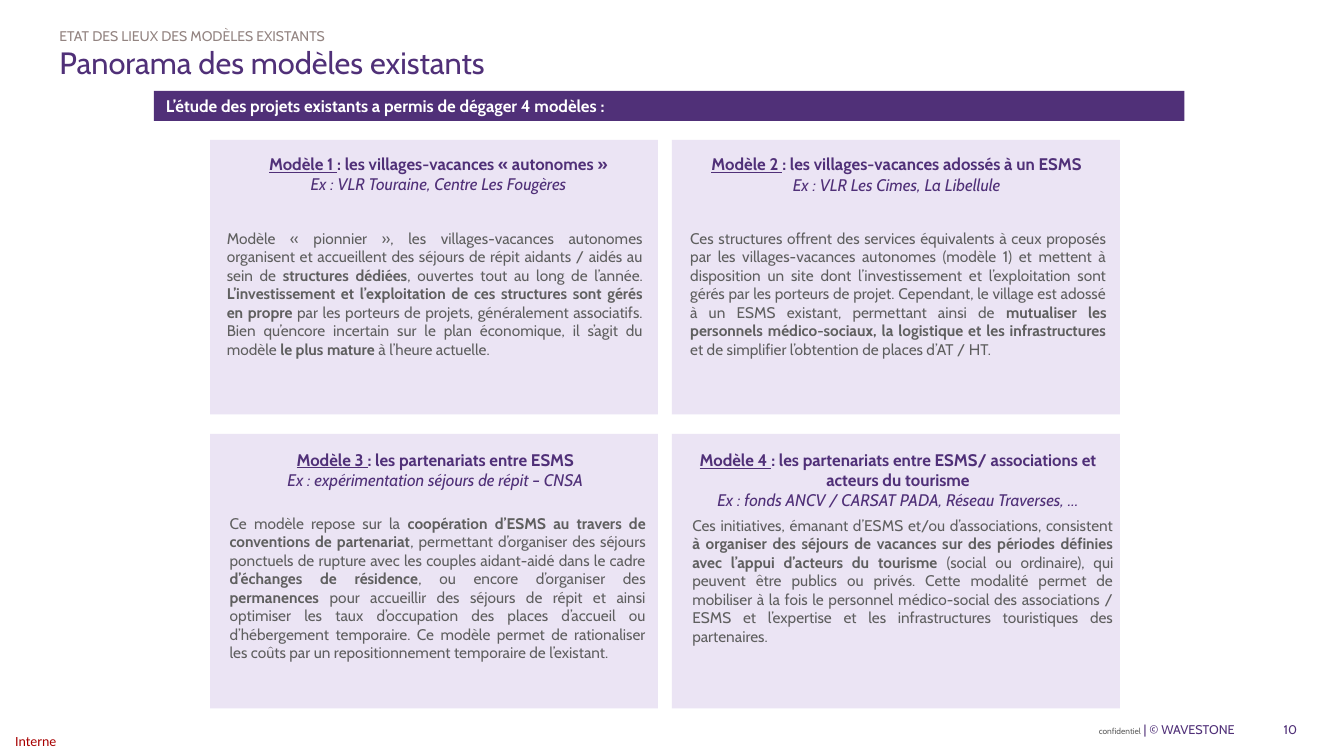
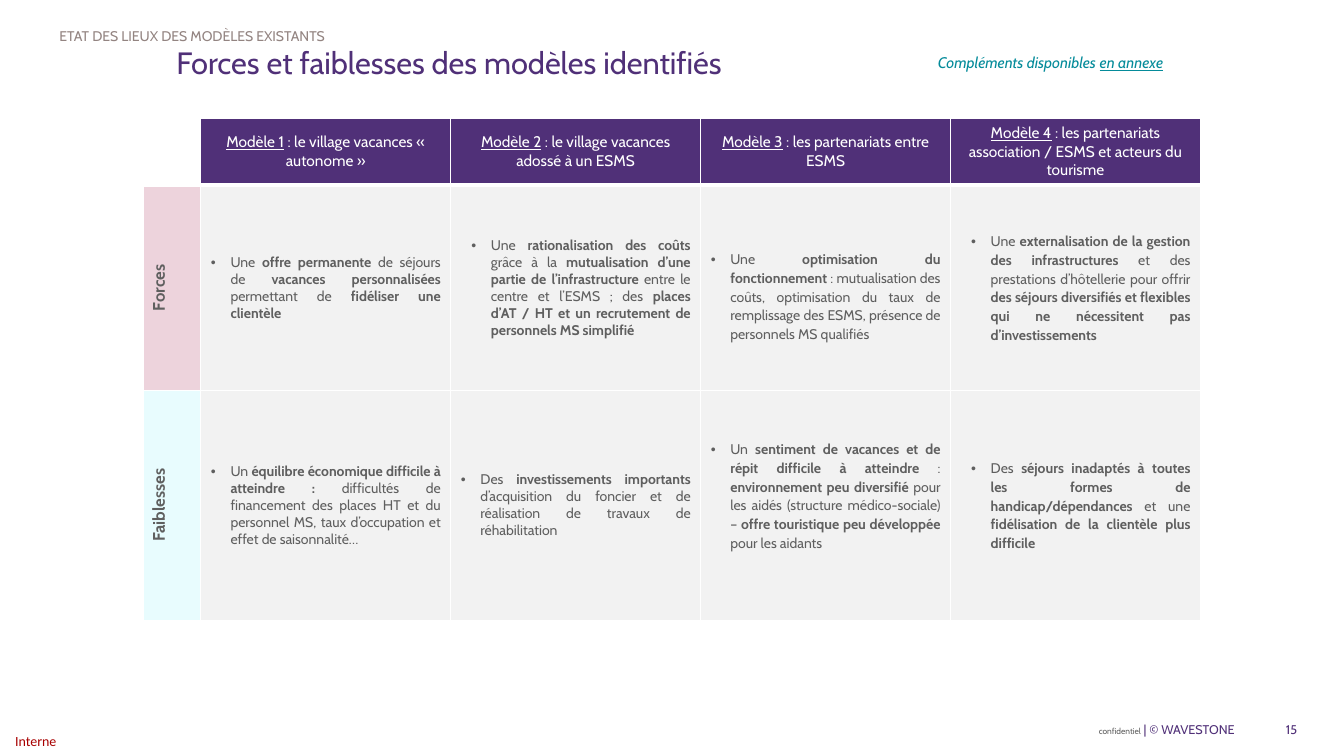
import pptx
import pptx.dml.color
import pptx.enum.shapes
import pptx.enum.text
import pptx.oxml
import pptx.oxml.ns
import pptx.util

Pt = pptx.util.Pt
ALIGN = pptx.enum.text.PP_ALIGN
ANCHOR = pptx.enum.text.MSO_ANCHOR
RECT = pptx.enum.shapes.MSO_SHAPE.RECTANGLE

COLORS = {
    "violet": "503078", "lilac": "EBE4F4", "text": "5F5F5F", "taupe": "938481",
    "red": "A80000", "teal": "048B9A", "white": "FFFFFF", "grey": "F2F2F2",
    "pink": "EDD3DC", "ice": "E8FCFE",
}
KICKER = "ETAT DES LIEUX DES MODÈLES EXISTANTS"


def rgb(name):
    return pptx.dml.color.RGBColor.from_string(COLORS[name])


def sub(parent, tag, **attrs):
    """Append a DrawingML element."""
    el = pptx.oxml.parse_xml(f"<{tag} {pptx.oxml.ns.nsdecls('a')}/>")
    for key, value in attrs.items():
        el.set(key, str(value))
    parent.append(el)
    return el


class Deck:
    FONT = "Cabin"
    INSET = (8.5, 3.6, 8.5, 3.6)

    def __init__(self):
        self.prs = pptx.Presentation()
        self.prs.slide_width, self.prs.slide_height = Pt(960), Pt(540)
        self.slide = None

    # Text
    def run(self, p, text, color="text", **fmt):
        r = p.add_run()
        r.text = text
        for key, value in {"name": self.FONT, **fmt}.items():
            setattr(r.font, key, value)
        r.font.color.rgb = rgb(color)

    def add_runs(self, p, text, size, color="text", align=ALIGN.LEFT, toggle="bold", **fmt):
        """Add runs; each * switches the toggled attribute on or off."""
        p.alignment = align
        for i, part in enumerate(text.split("*")):
            if part:
                self.run(p, part, color, size=Pt(size), **{**fmt, toggle: i % 2 == 1})

    def frame(self, sp, inset, anchor):
        tf = sp.text_frame
        values = {"word_wrap": True, "vertical_anchor": anchor,
                  "auto_size": pptx.enum.text.MSO_AUTO_SIZE.NONE}
        sides = ("margin_left", "margin_top", "margin_right", "margin_bottom")
        values.update(zip(sides, map(Pt, inset)))
        for key, value in values.items():
            setattr(tf, key, value)
        return tf

    def text(self, x, y, w, h, inset=INSET, anchor=ANCHOR.TOP):
        sp = self.slide.shapes.add_textbox(Pt(x), Pt(y), Pt(w), Pt(h))
        return self.frame(sp, inset, anchor)

    # Shared slide parts
    def placeholder(self, sp, box, anchor):
        for key, value in zip(("left", "top", "width", "height"), box):
            setattr(sp, key, Pt(value))
        return self.frame(sp, (8.5, 0, 8.5, 0), anchor).paragraphs[0]

    def new_slide(self, title, number, title_x=34, title_w=893):
        self.slide = self.prs.slides.add_slide(self.prs.slide_layouts[1])
        title_sp, kicker_sp = self.slide.placeholders
        p = self.placeholder(title_sp, (title_x, 31.5, title_w, 67.5), ANCHOR.TOP)
        self.add_runs(p, title, 22, "violet")
        p = self.placeholder(kicker_sp, (34, 11.5, 893, 20), ANCHOR.BOTTOM)
        pPr = p._p.get_or_add_pPr()
        pPr.set("marL", "0")
        pPr.set("indent", "0")
        sub(pPr, "a:buNone")
        p.space_before = Pt(0)
        self.add_runs(p, KICKER, 10, "taupe", ALIGN.JUSTIFY)
        self.footer(number)

    def footer(self, number):
        p = self.text(731.5, 512, 157.5, 18, (7.2, 3.6, 7.2, 3.6), ANCHOR.MIDDLE).paragraphs[0]
        for text, size, color in (("confidentiel", 6, "text"), (" ", 9, "text"),
                                  ("| © WAVESTONE", 9, "violet")):
            self.add_runs(p, text, size, color, ALIGN.RIGHT)
        p = self.text(892, 515.5, 34.5, 11, (0, 0, 0, 0), ANCHOR.MIDDLE).paragraphs[0]
        self.add_runs(p, str(number), 9, "violet", ALIGN.RIGHT)
        p = self.text(0, 519, 51, 21, (10.8, 0, 0, 0), ANCHOR.MIDDLE).paragraphs[0]
        self.add_runs(p, "Interne", 10, "red", name="Calibri")

    # Shapes
    def rect(self, x, y, w, h, fill):
        sp = self.slide.shapes.add_shape(RECT, Pt(x), Pt(y), Pt(w), Pt(h))
        sp.shadow.inherit = False
        sp.fill.solid()
        sp.fill.fore_color.rgb = rgb(fill)
        sp.line.fill.background()
        return sp

    def band(self, x, y, w, h, text):
        tf = self.frame(self.rect(x, y, w, h, "violet"), self.INSET, ANCHOR.MIDDLE)
        self.add_runs(tf.paragraphs[0], "*" + text, 12, "white")

    def model_head(self, box, head, example):
        tf = self.text(*box)
        self.add_runs(tf.paragraphs[0], head, 12, "violet", ALIGN.CENTER, "underline", bold=True)
        self.add_runs(tf.add_paragraph(), example, 12, "violet", ALIGN.CENTER, italic=True)

    # Table
    def table(self, x, y, cols, rows):
        sp = self.slide.shapes.add_table(len(rows), len(cols), Pt(x), Pt(y),
                                         Pt(sum(cols)), Pt(sum(rows)))
        tbl = sp.table
        tbl.first_row = tbl.horz_banding = False
        for lines, key, sizes in ((tbl.columns, "width", cols), (tbl.rows, "height", rows)):
            for line, size in zip(lines, sizes):
                setattr(line, key, Pt(size))
        return tbl

    def cell(self, cell, fill, bottom=1):
        tcPr = cell._tc.get_or_add_tcPr()
        for side, width in (("L", 1), ("R", 1), ("T", 1), ("B", bottom)):
            ln = sub(tcPr, f"a:ln{side}", w=Pt(width))
            sub(sub(ln, "a:solidFill"), "a:srgbClr", val=COLORS["white"])
        cell.fill.solid()
        cell.fill.fore_color.rgb = rgb(fill)
        cell.vertical_anchor = ANCHOR.MIDDLE
        return cell.text_frame.paragraphs[0]

    def row_label(self, cell, text, fill):
        p = self.cell(cell, fill)
        cell.vertical_anchor = ANCHOR.TOP
        cell._tc.tcPr.set("vert", "vert270")
        self.add_runs(p, "*" + text, 12, align=ALIGN.CENTER)

    def bullet_cell(self, cell, text, indent, spacing, **margins):
        p = self.cell(cell, "grey")
        pPr = p._p.get_or_add_pPr()
        pPr.set("marL", str(Pt(indent)))
        pPr.set("indent", str(-Pt(14)))
        sub(pPr, "a:buFont", typeface="Arial")
        sub(pPr, "a:buChar", char="•")
        p.line_spacing = spacing
        p.font.size = Pt(10)
        p.font.color.rgb = rgb("text")
        for key, value in margins.items():
            setattr(cell, key, Pt(value))
        self.add_runs(p, text, 10, align=ALIGN.JUSTIFY)


# Each model: heading box, heading, examples, body box, body
MODELS = [
    ((156, 106.5, 314.5, 36), "*Modèle 1 *: les villages-vacances « autonomes »",
     "Ex : VLR Touraine, Centre Les Fougères", (153.5, 160, 314.5, 114),
     "Modèle « pionnier », les villages-vacances autonomes organisent et accueillent des séjours "
     "de répit aidants / aidés au sein de *structures dédiées*, ouvertes tout au long de l’année. "
     "*L’investissement et l’exploitation de ces structures sont gérés en propre *par les porteurs "
     "de projets, généralement associatifs. Bien qu’encore incertain sur le plan économique, il "
     "s’agit du modèle *le plus mature *à l’heure actuelle."),
    ((471, 106.5, 339, 51), "*Modèle 2 *: les villages-vacances adossés à un ESMS",
     "Ex : VLR Les Cimes, La Libellule", (484.5, 160, 314.5, 114),
     "Ces structures offrent des services équivalents à ceux proposés par les villages-vacances "
     "autonomes (modèle 1) et mettent à disposition un site dont l’investissement et "
     "l’exploitation sont gérés par les porteurs de projet. Cependant, le village est adossé à un "
     "ESMS existant, permettant ainsi de *mutualiser les personnels médico-sociaux, la logistique "
     "et les infrastructures *et de simplifier l’obtention de places d’AT / HT."),
    ((151, 317.5, 320, 36), "*Modèle 3 *: les partenariats entre ESMS",
     "Ex : expérimentation séjours de répit – CNSA", (155.5, 363.5, 314.5, 127),
     "Ce modèle repose sur la *coopération d’ESMS au travers de conventions de partenariat*, "
     "permettant d’organiser des séjours ponctuels de rupture avec les couples aidant-aidé dans le "
     "cadre *d’échanges de résidence*, ou encore d’organiser des *permanences *pour accueillir des "
     "séjours de répit et ainsi optimiser les taux d’occupation des places d’accueil ou "
     "d’hébergement temporaire. Ce modèle permet de rationaliser les coûts par un "
     "repositionnement temporaire de l’existant."),
    ((481.5, 317.5, 320, 65),
     "*Modèle 4 *: les partenariats entre ESMS/ associations et acteurs du tourisme",
     "Ex : fonds ANCV / CARSAT PADA, Réseau Traverses, …", (486, 365, 318, 101),
     "Ces initiatives, émanant d’ESMS et/ou d’associations, consistent *à organiser des séjours de "
     "vacances sur des périodes définies avec l’appui d’acteurs du tourisme *(social ou "
     "ordinaire), qui peuvent être publics ou privés. Cette modalité permet de mobiliser à la fois "
     "le personnel médico-social des associations / ESMS et l’expertise et les infrastructures "
     "touristiques des partenaires."),
]

HEADERS = [
    "*Modèle 1* : le village vacances « autonome »",
    "*Modèle 2* : le village vacances adossé à un ESMS",
    "*Modèle 3* : les partenariats entre ESMS",
    "*Modèle 4* : les partenariats association / ESMS et acteurs du tourisme",
]
# Each row: label, fill, then cells of text, indent, line spacing, margins
ROWS = [
    ("Forces", "pink", [
        ("Une *offre permanente *de séjours de *vacances personnalisées* permettant de "
         "*fidéliser une clientèle*", 14, 1.0, {}),
        ("Une *rationalisation des coûts *grâce à la *mutualisation d’une partie de "
         "l’infrastructure *entre le centre et l’ESMS ; des *places d’AT / HT et un recrutement "
         "de personnels MS simplifié*", 21.5, 1.0, {}),
        ("Une *optimisation du fonctionnement *: mutualisation des coûts, optimisation du taux de "
         "remplissage des ESMS, présence de personnels MS qualifiés", 14, 1.1,
         {"margin_top": 16}),
        ("Une *externalisation de la gestion des infrastructures* et des prestations d’hôtellerie "
         "pour offrir *des séjours diversifiés et flexibles qui ne nécessitent pas "
         "d’investissements*", 21.5, 1.1, {}),
    ]),
    ("Faiblesses", "ice", [
        ("Un *équilibre économique difficile à atteindre : *difficultés de financement des places "
         "HT et du personnel MS, taux d’occupation et effet de saisonnalité…", 14, 1.0, {}),
        ("Des *investissements importants *d’acquisition du foncier et de réalisation de travaux "
         "de réhabilitation", 14, 1.0, {}),
        ("Un *sentiment de vacances et de répit difficile à atteindre *: *environnement peu "
         "diversifié *pour les aidés (structure médico-sociale) – *offre touristique peu "
         "développée* pour les aidants", 14, 1.1, {"margin_bottom": 17.5}),
        ("Des *séjours inadaptés à toutes les formes de handicap/dépendances *et une "
         "*fidélisation de la clientèle plus difficile*", 21.5, 1.1, {}),
    ]),
]


def models_slide(d):
    d.new_slide("Panorama des modèles existants", 10)
    # Cards on a 2 x 2 grid
    for i in range(len(MODELS)):
        d.rect(150 + i % 2 * 330, 100 + i // 2 * 210, 320, 196, "lilac")
    for head_box, head, example, body_box, body in MODELS:
        d.model_head(head_box, head, example)
        d.add_runs(d.text(*body_box).paragraphs[0], body, 11, align=ALIGN.JUSTIFY)
    d.band(110, 65, 736, 21.5, "L’étude des projets existants a permis de dégager 4 modèles :")


def strengths_slide(d):
    d.new_slide("Forces et faiblesses des modèles identifiés", 15, 117.5, 766)
    tbl = d.table(102.5, 84.5, [41] + [178.5] * 4, [43, 147, 164])
    # Header row
    d.cell(tbl.cell(0, 0), "white", 3)
    for c, text in enumerate(HEADERS, 1):
        p = d.cell(tbl.cell(0, c), "violet", 3)
        d.add_runs(p, text, 11, "white", ALIGN.CENTER, "underline", bold=False)
    # Body rows
    for r, (label, fill, cells) in enumerate(ROWS, 1):
        d.row_label(tbl.cell(r, 0), label, fill)
        for c, (text, indent, spacing, margins) in enumerate(cells, 1):
            d.bullet_cell(tbl.cell(r, c), text, indent, spacing, **margins)
    # Pointer to the appendix
    p = d.text(661.5, 34.5, 265.5, 21).paragraphs[0]
    d.add_runs(p, "Compléments disponibles *en annexe*", 11, "teal", toggle="underline", italic=True)


def main():
    d = Deck()
    models_slide(d)
    strengths_slide(d)
    d.prs.save("out.pptx")


if __name__ == "__main__":
    main()
